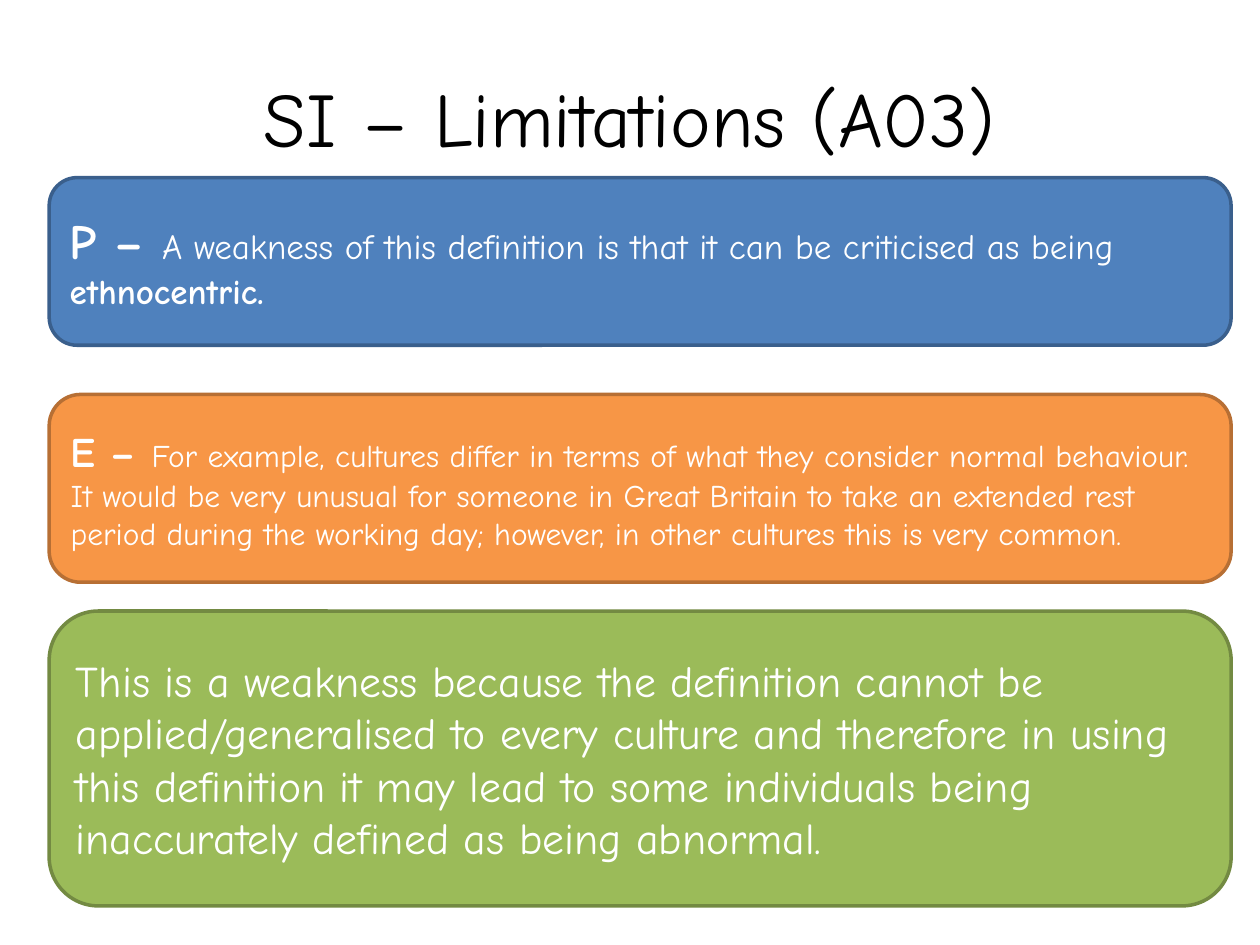
import pptx
import pptx.dml.color
import pptx.enum.shapes
import pptx.enum.text
import pptx.util

Pt = pptx.util.Pt
FONT = "Comic Neue"
COLOURS = {
    "black": "000000",
    "white": "FFFFFF",
    "blue": "4F81BD",
    "blue line": "3A5F8C",
    "orange": "F79646",
    "orange line": "B76F34",
    "green": "9BBB59",
    "green line": "738A42",
}
PANEL_LEFT, PANEL_WIDTH = 28.1, 675.4


def colour(name):
    return pptx.dml.color.RGBColor.from_string(COLOURS[name])


def add_text(paragraph, text, size, color="white", bold=False):
    run = paragraph.add_run()
    run.text = text
    run.font.name = FONT
    run.font.size = Pt(size)
    run.font.bold = bold
    run.font.color.rgb = colour(color)


def set_title(slide, text):
    title = slide.shapes.title
    title.left, title.top, title.width, title.height = Pt(36), Pt(21.6), Pt(648), Pt(90)
    title.text_frame.vertical_anchor = pptx.enum.text.MSO_ANCHOR.MIDDLE
    paragraph = title.text_frame.paragraphs[0]
    paragraph.alignment = pptx.enum.text.PP_ALIGN.CENTER
    add_text(paragraph, text, size=44, color="black")


def add_panel(slide, top, height, fill, runs):
    """Add a full-width rounded panel; runs are (text, size, bold)."""
    panel = slide.shapes.add_shape(
        pptx.enum.shapes.MSO_SHAPE.ROUNDED_RECTANGLE,
        Pt(PANEL_LEFT), Pt(top), Pt(PANEL_WIDTH), Pt(height))
    panel.shadow.inherit = False
    panel.fill.solid()
    panel.fill.fore_color.rgb = colour(fill)
    panel.line.color.rgb = colour(f"{fill} line")
    panel.line.width = Pt(2)
    frame = panel.text_frame
    frame.word_wrap = True
    frame.vertical_anchor = pptx.enum.text.MSO_ANCHOR.MIDDLE
    paragraph = frame.paragraphs[0]
    paragraph.alignment = pptx.enum.text.PP_ALIGN.LEFT
    for text, size, bold in runs:
        add_text(paragraph, text, size=size, bold=bold)


def main():
    presentation = pptx.Presentation()
    presentation.slide_width, presentation.slide_height = Pt(720), Pt(540)
    slide = presentation.slides.add_slide(presentation.slide_layouts[5])

    set_title(slide, "SI – Limitations (A03)")
    add_panel(slide, 101.5, 95.8, "blue", [
        ("P – ", 28, True),
        ("A weakness of this definition is that it can be criticised as being ", 20, False),
        ("ethnocentric.", 20, True),
    ])
    add_panel(slide, 225.4, 107.3, "orange", [
        ("E – ", 24, True),
        ("For example, cultures differ in terms of what they consider normal behaviour. "
         "It would be very unusual for someone in Great Britain to take an extended rest "
         "period during the working day; however, in other cultures this is very common.",
         18, False),
    ])
    add_panel(slide, 349.2, 168.5, "green", [
        ("This is a weakness because the definition cannot be applied/generalised to every "
         "culture and therefore in using this definition it may lead to some individuals "
         "being inaccurately defined as being abnormal.", 25, False),
    ])
    presentation.save("out.pptx")


if __name__ == "__main__":
    main()
